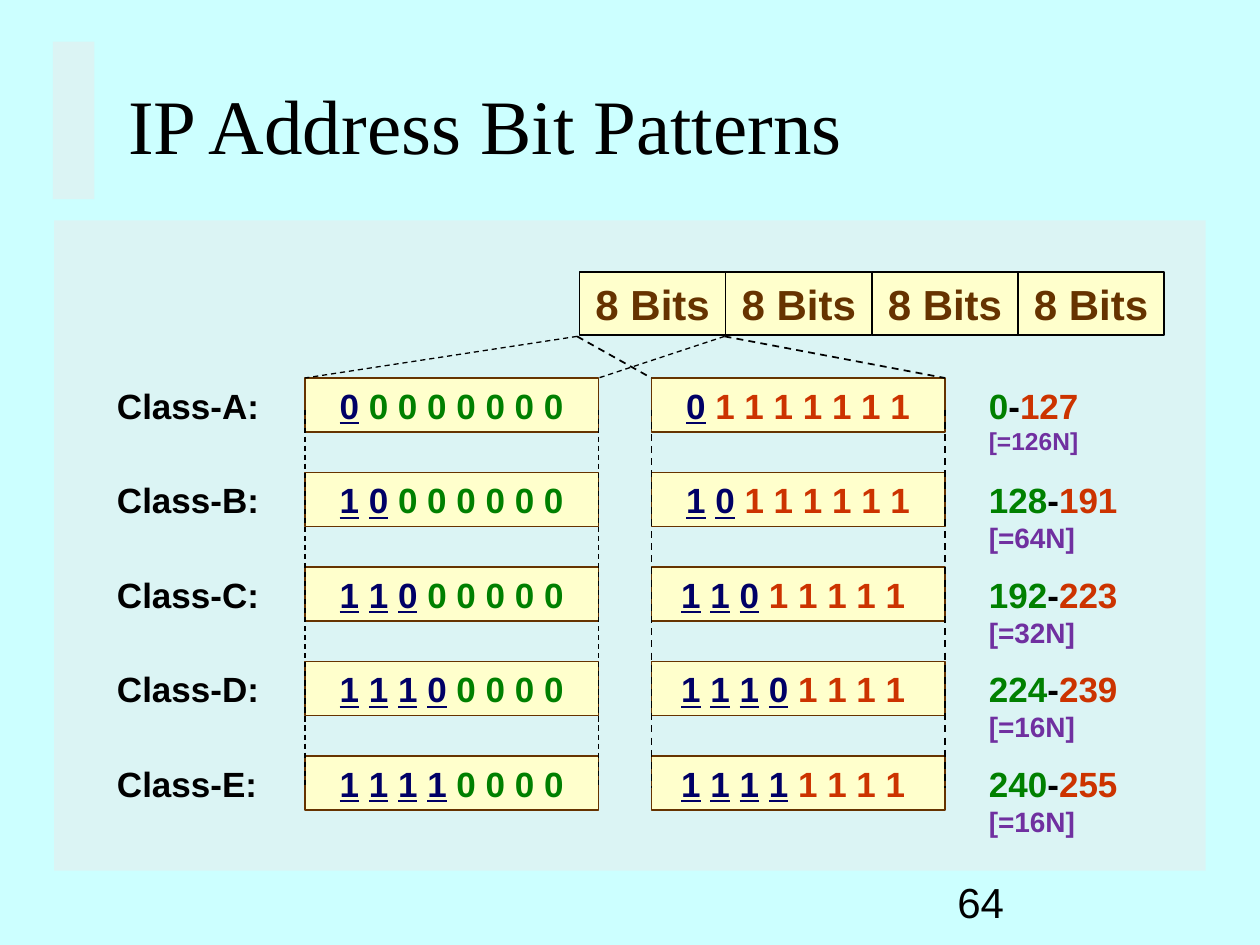
from dataclasses import dataclass

import pptx
import pptx.dml.color
import pptx.enum.dml
import pptx.enum.shapes
import pptx.enum.text
import pptx.oxml.ns
import pptx.util
from lxml import etree

Inches = pptx.util.Inches
RGBColor = pptx.dml.color.RGBColor
ALIGN = pptx.enum.text.PP_ALIGN
ANCHOR = pptx.enum.text.MSO_ANCHOR

SKY = RGBColor(0xCC, 0xFF, 0xFF)
PANEL = RGBColor(0xEA, 0xEA, 0xEA)
CREAM = RGBColor(0xFF, 0xFF, 0xCC)
BROWN = RGBColor(0x66, 0x33, 0x00)
BLACK = RGBColor(0x00, 0x00, 0x00)
NAVY = RGBColor(0x00, 0x00, 0x66)
GREEN = RGBColor(0x00, 0x80, 0x00)
RED = RGBColor(0xCC, 0x33, 0x00)
PURPLE = RGBColor(0x70, 0x30, 0xA0)

FIRST_ROW, ROW_STEP, ROW_HEIGHT = 3.0, 0.75, 0.43
BITS_WIDTH = 2.33
OCTET_LEFT, OCTET_TOP, OCTET_WIDTH = 4.6, 2.16, 1.16
OCTET_BOTTOM = 2.67


@dataclass(frozen=True)
class AddressClass:
    letter: str
    prefix: str
    low: str
    high: str
    networks: str
    networks_size: int = 16


@dataclass(frozen=True)
class BitColumn:
    left: float
    fill_bit: str
    color: RGBColor
    dash_width: float
    trailing_space_from: int


CLASSES = [
    AddressClass("A", "0", "0", "127", "126", 14),
    AddressClass("B", "10", "128", "191", "64"),
    AddressClass("C", "110", "192", "223", "32"),
    AddressClass("D", "1110", "224", "239", "16"),
    AddressClass("E", "1111", "240", "255", "16"),
]
COLUMNS = [
    BitColumn(2.42, "0", GREEN, 0.75, 9),
    BitColumn(5.17, "1", RED, 1, 3),
]


def add_text(paragraph, text: str, *, size: float = 20, color: RGBColor = BLACK,
             bold: bool = True, underline: bool = False, font: str = "Arial") -> None:
    run = paragraph.add_run()
    run.text = text
    run.font.name = font
    run.font.size = pptx.util.Pt(size)
    run.font.bold = bold
    run.font.underline = underline
    run.font.color.rgb = color


def add_box(slide, left: float, top: float, width: float, height: float,
            anchor=ANCHOR.TOP):
    box = slide.shapes.add_textbox(Inches(left), Inches(top), Inches(width), Inches(height))
    box.text_frame.word_wrap = True
    box.text_frame.vertical_anchor = anchor
    return box.text_frame.paragraphs[0]


def add_rectangle(slide, left: float, top: float, width: float, height: float,
                  fill: RGBColor):
    rectangle = slide.shapes.add_shape(
        pptx.enum.shapes.MSO_SHAPE.RECTANGLE,
        Inches(left), Inches(top), Inches(width), Inches(height))
    rectangle.shadow.inherit = False
    rectangle.fill.solid()
    rectangle.fill.fore_color.rgb = fill
    rectangle.line.fill.background()
    return rectangle


def add_panel(slide, left: float, top: float, width: float, height: float) -> None:
    panel = add_rectangle(slide, left, top, width, height, PANEL)
    color = next(panel.fill._xPr.iter(pptx.oxml.ns.qn("a:srgbClr")))
    etree.SubElement(color, pptx.oxml.ns.qn("a:alpha"), val="50000")


def add_cell(slide, left: float, top: float, width: float, height: float,
             border: RGBColor):
    cell = add_rectangle(slide, left, top, width, height, CREAM)
    cell.line.color.rgb = border
    cell.line.width = pptx.util.Pt(0.75)
    cell.text_frame.vertical_anchor = ANCHOR.TOP
    cell.text_frame.word_wrap = True
    paragraph = cell.text_frame.paragraphs[0]
    paragraph.alignment = ALIGN.CENTER
    return paragraph


def add_dash(slide, x1: float, y1: float, x2: float, y2: float, width: float) -> None:
    dash = slide.shapes.add_connector(
        pptx.enum.shapes.MSO_CONNECTOR.STRAIGHT,
        Inches(x1), Inches(y1), Inches(x2), Inches(y2))
    dash.line.color.rgb = BLACK
    dash.line.width = pptx.util.Pt(width)
    dash.line.dash_style = pptx.enum.dml.MSO_LINE.DASH
    etree.SubElement(dash._element.spPr, pptx.oxml.ns.qn("a:effectLst"))


def add_bits(slide, column: BitColumn, prefix: str, top: float) -> None:
    bits = add_cell(slide, column.left, top, BITS_WIDTH, ROW_HEIGHT, BROWN)
    for bit in prefix:
        add_text(bits, bit, color=NAVY, underline=True)
        add_text(bits, " ", color=NAVY)
    rest = " ".join(column.fill_bit * (8 - len(prefix)))
    if len(prefix) >= column.trailing_space_from:
        rest += " "
    add_text(bits, rest, color=column.color)


def add_class_row(slide, address: AddressClass, top: float) -> None:
    add_text(add_box(slide, 0.83, top, 1.41, ROW_HEIGHT), f"Class-{address.letter}:")
    span = add_box(slide, 7.75, top, 1.33, 0.71)
    add_text(span, address.low, color=GREEN)
    add_text(span, "-")
    add_text(span, f"{address.high} ", color=RED)
    add_text(span, f"[={address.networks}N]", size=address.networks_size, color=PURPLE)


def add_column(slide, column: BitColumn, tops: list[float]) -> None:
    for address, top in zip(CLASSES, tops):
        add_bits(slide, column, address.prefix, top)
    for octet_x, edge in ((4.58, column.left), (5.75, column.left + BITS_WIDTH)):
        add_dash(slide, octet_x, OCTET_BOTTOM, edge, FIRST_ROW, column.dash_width)
        add_dash(slide, edge, 3.25, edge, 6.25, column.dash_width)


def main() -> None:
    deck = pptx.Presentation()
    deck.slide_width, deck.slide_height = Inches(10), Inches(7.5)
    slide = deck.slides.add_slide(deck.slide_layouts[6])
    slide.background.fill.solid()
    slide.background.fill.fore_color.rgb = SKY

    add_panel(slide, 0.43, 1.75, 9.14, 5.16)
    add_panel(slide, 0.42, 0.33, 0.33, 1.25)
    add_text(add_box(slide, 7.5, 6.91, 2.08, 0.5, ANCHOR.MIDDLE), "64", size=24, bold=False)
    add_text(add_box(slide, 0.92, 0.38, 8.5, 1.21, ANCHOR.MIDDLE),
             "IP Address Bit Patterns", size=44, bold=False, font="Times New Roman")

    for index in range(4):
        octet = add_cell(slide, OCTET_LEFT + index * OCTET_WIDTH, OCTET_TOP,
                         OCTET_WIDTH, 0.5, BLACK)
        add_text(octet, "8 Bits", size=24, color=BROWN)

    tops = [FIRST_ROW + index * ROW_STEP for index in range(len(CLASSES))]
    for address, top in zip(CLASSES, tops):
        add_class_row(slide, address, top)
    for column in COLUMNS:
        add_column(slide, column, tops)

    deck.save("out.pptx")


if __name__ == "__main__":
    main()
